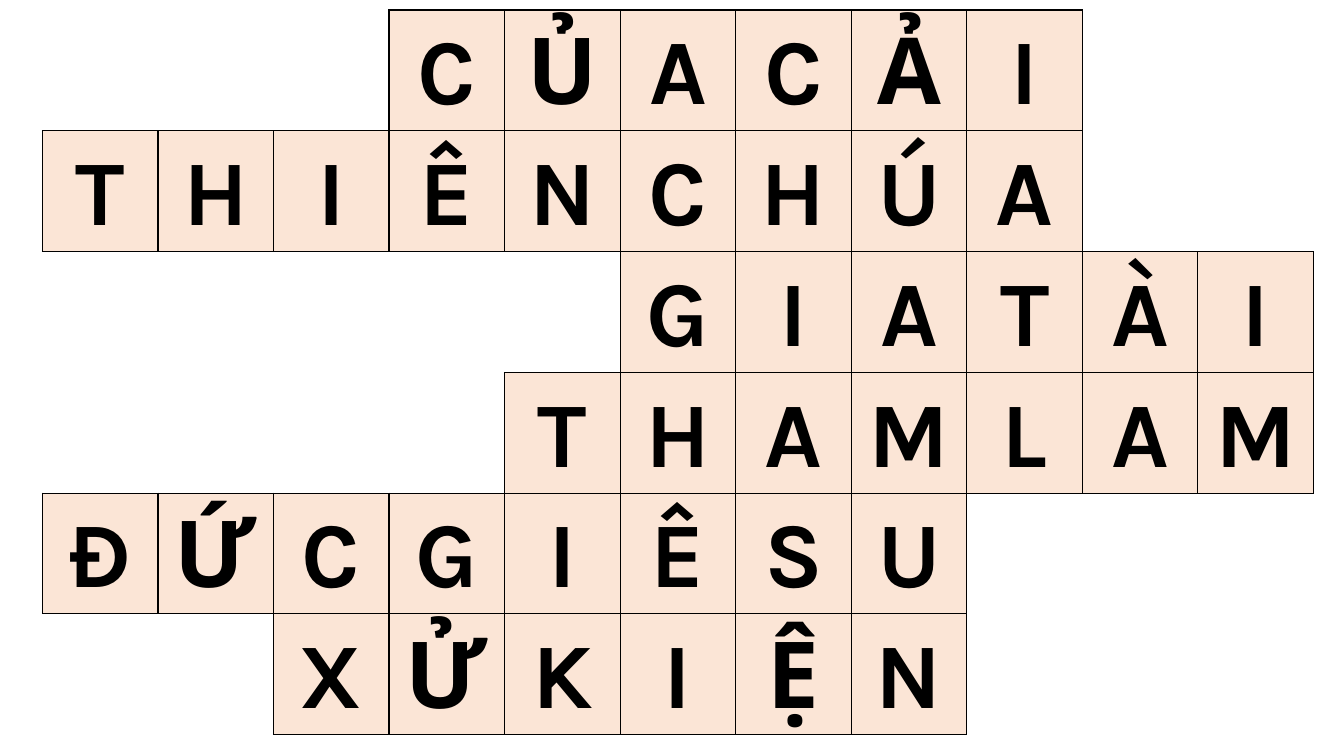
"""Build a Vietnamese crossword answer slide as one table."""
import pptx
import pptx.dml.color
import pptx.enum.text
import pptx.oxml
import pptx.oxml.ns
import pptx.util

COLORS = {"ink": "000000", "tile": "FBE5D6", "paper": "FFFFFF"}
COLUMN_COUNT = 11
ANSWERS = [
    (3, "CỦACẢI"),
    (0, "THIÊNCHÚA"),
    (5, "GIATÀI"),
    (4, "THAMLAM"),
    (0, "ĐỨCGIÊSU"),
    (2, "XỬKIỆN"),
]
SIDES = {"lnL": (0, -1), "lnR": (0, 1), "lnT": (-1, 0), "lnB": (1, 0)}


class CrosswordSlide:
    """Hold the crossword style and the current slide."""

    def __init__(self, slide):
        self.slide = slide
        self.font_name = "Karla"
        self.font_size = pptx.util.Pt(66)
        self.border_width = pptx.util.Pt(1)

    def color(self, name):
        """Return a named colour."""
        return pptx.dml.color.RGBColor.from_string(COLORS[name])

    def border(self, cell, side, visible):
        """Set one border of a cell."""
        paint = "<a:noFill/>"
        if visible:
            paint = f'<a:solidFill><a:srgbClr val="{COLORS["ink"]}"/></a:solidFill>'
        namespace = pptx.oxml.ns.nsdecls("a")
        line = pptx.oxml.parse_xml(
            f'<a:{side} {namespace} w="{self.border_width}">{paint}</a:{side}>'
        )
        cell._tc.get_or_add_tcPr().append(line)

    def fill(self, cell, name):
        """Fill a cell with a named colour."""
        cell.fill.solid()
        cell.fill.fore_color.rgb = self.color(name)

    def letter(self, cell, text):
        """Write one centred letter in a cell."""
        cell.vertical_anchor = pptx.enum.text.MSO_ANCHOR.MIDDLE
        cell.margin_left = cell.margin_right = pptx.util.Inches(0.07)
        cell.margin_top = cell.margin_bottom = 0
        paragraph = cell.text_frame.paragraphs[0]
        paragraph.alignment = pptx.enum.text.PP_ALIGN.CENTER
        paragraph.line_spacing = 1.07
        paragraph.space_after = pptx.util.Pt(8)
        run = paragraph.add_run()
        run.text = text
        run.font.name = self.font_name
        run.font.size = self.font_size
        run.font.bold = True
        run.font.color.rgb = self.color("ink")

    def crossword(self, answers, left, top, width, height):
        """Draw the answers, outlining only the squares that hold a letter."""
        letters = {
            (row, start + index): letter
            for row, (start, answer) in enumerate(answers)
            for index, letter in enumerate(answer)
        }
        box = [pptx.util.Inches(length) for length in (left, top, width, height)]
        table = self.slide.shapes.add_table(len(answers), COLUMN_COUNT, *box).table
        table.first_row = table.horz_banding = False
        for row in range(len(answers)):
            for column in range(COLUMN_COUNT):
                cell = table.cell(row, column)
                letter = letters.get((row, column))
                for side, (down, right) in SIDES.items():
                    neighbour = (row + down, column + right)
                    self.border(cell, side, letter or neighbour in letters)
                self.fill(cell, "tile" if letter else "paper")
                if letter:
                    self.letter(cell, letter)


def main():
    """Create and save the presentation."""
    presentation = pptx.Presentation()
    presentation.slide_width = pptx.util.Inches(13.33)
    presentation.slide_height = pptx.util.Inches(7.5)
    slide = presentation.slides.add_slide(presentation.slide_layouts[6])
    CrosswordSlide(slide).crossword(ANSWERS, 0.42, 0.1, 12.61, 7.19)
    presentation.save("out.pptx")


if __name__ == "__main__":
    main()
